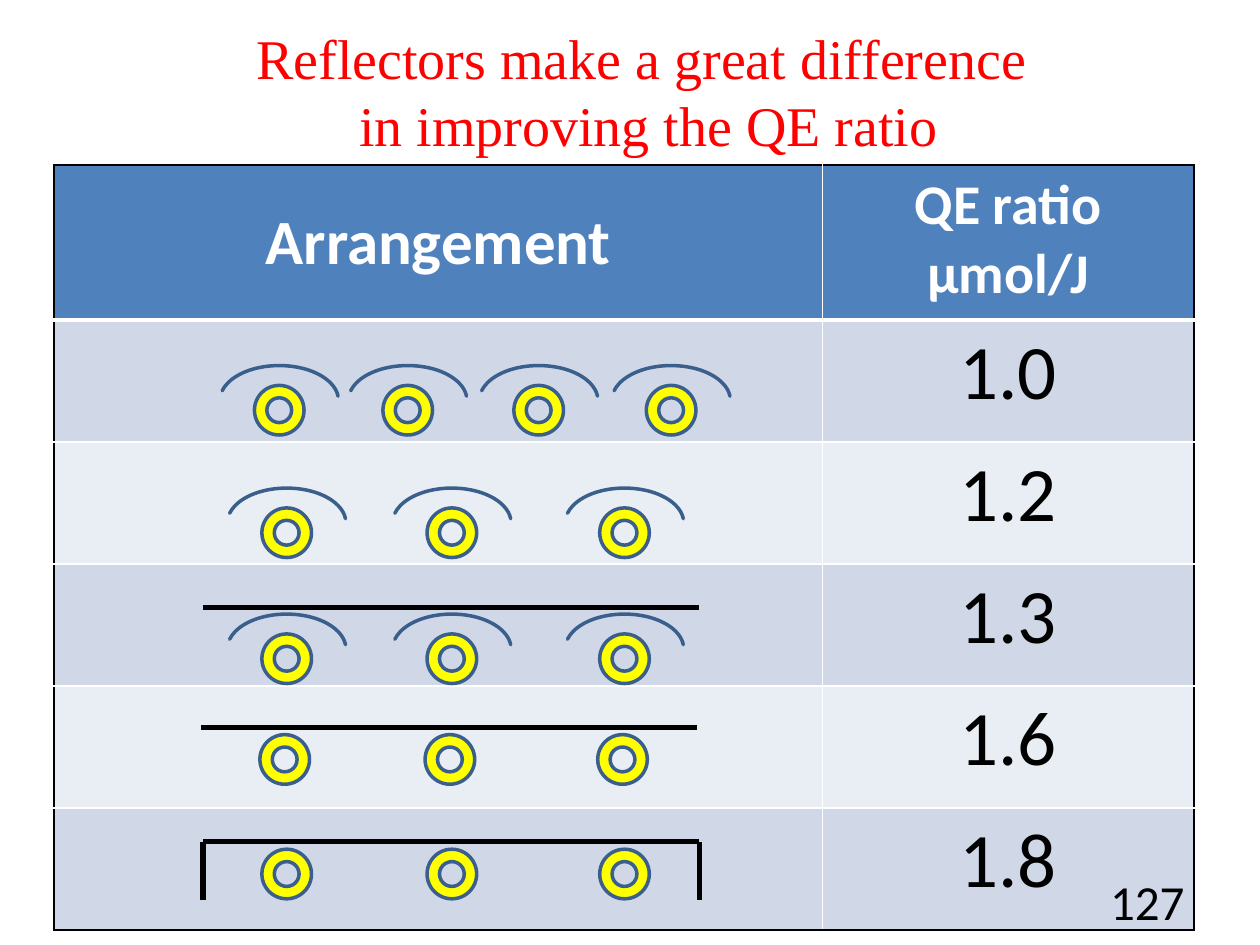
from dataclasses import dataclass

from lxml.etree import SubElement
from pptx import Presentation
from pptx.dml.color import RGBColor
from pptx.enum.shapes import MSO_CONNECTOR as Connector
from pptx.enum.shapes import MSO_SHAPE as Shape
from pptx.enum.text import MSO_ANCHOR as Anchor
from pptx.enum.text import PP_ALIGN as Align
from pptx.oxml.ns import qn
from pptx.util import Cm, Pt


@dataclass(frozen=True)
class Theme:
    title_font: str = "Times New Roman"
    body_font: str = "Calibri"
    red: str = "FF0000"
    black: str = "000000"
    white: str = "FFFFFF"
    blue: str = "4F81BD"
    outline: str = "3A5F8C"
    lamp: str = "FFFF00"
    bands: tuple = ("D0D8E8", "E9EDF4")
    title_size: int = 32
    arrangement_size: int = 36
    ratio_head_size: int = 32
    ratio_size: int = 44
    number_size: int = 28


THEME = Theme()

TITLE = "Reflectors make a great difference \vin improving the QE ratio"
PAGE_NUMBER = "127"
HEADINGS = [
    (["Arrangement"], THEME.arrangement_size, Anchor.MIDDLE),
    (["QE ratio", "μmol/J"], THEME.ratio_head_size, Anchor.TOP),
]

# Lengths in cm. "bar" is the height of the flat reflector above the lamps.
FOUR_LAMPS = (5.13, 7.72, 10.36, 13.03)
THREE_LAMPS = (5.28, 8.61, 12.09)
ARRANGEMENTS = [
    dict(ratio="1.0", lamps=FOUR_LAMPS, top=7.77, arcs=True),
    dict(ratio="1.2", lamps=THREE_LAMPS, top=10.24, arcs=True),
    dict(ratio="1.3", lamps=THREE_LAMPS, top=12.78, arcs=True, bar=0.54),
    dict(ratio="1.6", lamps=THREE_LAMPS, top=14.81, bar=0.15, shift=-0.04),
    dict(ratio="1.8", lamps=THREE_LAMPS, top=17.12, bar=0.15, walls=True),
]

TABLE_LEFT, TABLE_TOP = 1.09, 3.33
COLUMN_WIDTHS = (15.49, 7.49)
HEADER_HEIGHT, ROW_HEIGHT = 3.12, 2.46
LAMP_SIZE = 1.0
ARC_WIDTH, ARC_HEIGHT = 2.39, 1.4
ARC_ANGLES = (113.68, 213.64, 0)
ARC_RISE = 0.4
BAR_LEFT, BAR_RIGHT = 4.09, 14.1
WALL_HEIGHT = 1.17


def color(value):
    return RGBColor.from_string(value)


def write(frame, lines, *, size, fill, font=THEME.body_font, bold=False, align=Align.CENTER):
    for index, line in enumerate(lines):
        para = frame.paragraphs[0] if index == 0 else frame.add_paragraph()
        para.alignment = align
        for part_index, part in enumerate(line.split("\v")):
            if part_index:
                para.add_line_break()
            span = para.add_run()
            span.text = part
            span.font.name = font
            span.font.size = Pt(size)
            span.font.bold = bold
            span.font.color.rgb = color(fill)


def add_text(page, place, lines, **text_format):
    box = page.shapes.add_textbox(*map(Cm, place))
    box.text_frame.word_wrap = True
    box.text_frame.vertical_anchor = Anchor.MIDDLE
    write(box.text_frame, lines, **text_format)


def set_borders(cell, row, column, row_count, column_count):
    """Black on the table's outer edge, white inside, thicker under the header."""
    sides = {
        "a:lnL": (column == 0, 1),
        "a:lnR": (column == column_count - 1, 1),
        "a:lnT": (row == 0, 3 if row == 1 else 1),
        "a:lnB": (row == row_count - 1, 3 if row == 0 else 1),
    }
    properties = cell._tc.get_or_add_tcPr()
    for tag, (outer, width) in sides.items():
        border = SubElement(properties, qn(tag), w=str(Pt(width)))
        fill = SubElement(border, qn("a:solidFill"))
        SubElement(fill, qn("a:srgbClr"), val=THEME.black if outer else THEME.white)


def add_ratio_table(page):
    row_count, column_count = len(ARRANGEMENTS) + 1, len(COLUMN_WIDTHS)
    height = HEADER_HEIGHT + ROW_HEIGHT * len(ARRANGEMENTS)
    table = page.shapes.add_table(
        row_count, column_count, Cm(TABLE_LEFT), Cm(TABLE_TOP), Cm(sum(COLUMN_WIDTHS)), Cm(height)
    ).table
    table.horz_banding = False
    for column, width in zip(table.columns, COLUMN_WIDTHS):
        column.width = Cm(width)
    for row_index, row in enumerate(table.rows):
        row.height = Cm(ROW_HEIGHT if row_index else HEADER_HEIGHT)
        band = THEME.bands[(row_index - 1) % 2] if row_index else THEME.blue
        for column_index, cell in enumerate(row.cells):
            set_borders(cell, row_index, column_index, row_count, column_count)
            cell.fill.solid()
            cell.fill.fore_color.rgb = color(band)

    for column_index, (lines, size, anchor) in enumerate(HEADINGS):
        cell = table.cell(0, column_index)
        cell.vertical_anchor = anchor
        write(cell.text_frame, lines, size=size, fill=THEME.white, bold=True)
    for row_index, arrangement in enumerate(ARRANGEMENTS, start=1):
        write(table.cell(row_index, 1).text_frame, [arrangement["ratio"]],
              size=THEME.ratio_size, fill=THEME.black)


def add_outlined(shapes, kind, place, fill):
    shape = shapes.add_shape(kind, *map(Cm, place))
    shape.shadow.inherit = False
    shape.fill.solid()
    shape.fill.fore_color.rgb = color(fill)
    shape.line.color.rgb = color(THEME.outline)
    shape.line.width = Pt(2)
    return shape


def add_reflector_line(shapes, *ends):
    line = shapes.add_connector(Connector.STRAIGHT, *map(Cm, ends))
    line.line.color.rgb = color(THEME.black)
    line.line.width = Pt(3)
    SubElement(line._element.spPr, qn("a:effectLst"))


def add_arrangement(page, lamps, top, arcs=False, bar=None, walls=False, shift=0, **_):
    shapes = page.shapes.add_group_shape().shapes
    for left in lamps:
        add_outlined(shapes, Shape.DONUT, (left + shift, top, LAMP_SIZE, LAMP_SIZE), THEME.lamp)
    if arcs:
        for left in lamps:
            arc_left = left + shift - (ARC_WIDTH - LAMP_SIZE) / 2
            place = (arc_left, top - ARC_RISE, ARC_WIDTH, ARC_HEIGHT)
            arc = add_outlined(shapes, Shape.BLOCK_ARC, place, THEME.blue)
            for index, angle in enumerate(ARC_ANGLES):
                arc.adjustments[index] = angle
    if bar is not None:
        bar_top = top - bar
        add_reflector_line(shapes, BAR_LEFT + shift, bar_top, BAR_RIGHT + shift, bar_top)
        if walls:
            for x in (BAR_LEFT, BAR_RIGHT):
                add_reflector_line(page.shapes, x, bar_top, x, bar_top + WALL_HEIGHT)


def main():
    deck = Presentation()
    deck.slide_width, deck.slide_height = Cm(25.4), Cm(19.05)
    page = deck.slides.add_slide(deck.slide_layouts[6])
    add_ratio_table(page)
    for arrangement in ARRANGEMENTS:
        add_arrangement(page, **arrangement)
    add_text(page, (2.82, 0.23, 20.52, 3.2), [TITLE],
             size=THEME.title_size, fill=THEME.red, font=THEME.title_font)
    add_text(page, (18.21, 17.65, 5.92, 1.02), [PAGE_NUMBER],
             size=THEME.number_size, fill=THEME.black, align=Align.RIGHT)
    deck.save("out.pptx")


if __name__ == "__main__":
    main()
